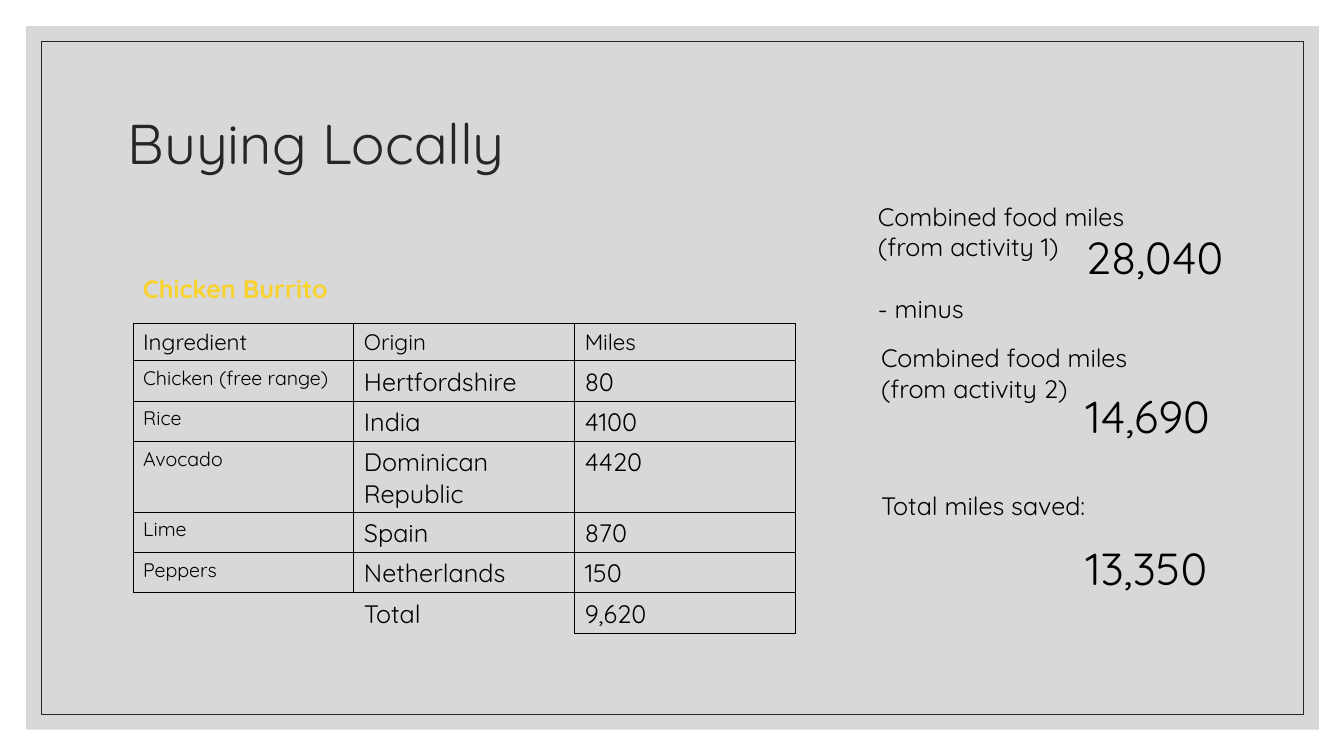
from lxml import etree
from pptx import Presentation
from pptx.dml.color import RGBColor
from pptx.enum.shapes import MSO_SHAPE
from pptx.enum.text import MSO_ANCHOR
from pptx.oxml.ns import qn
from pptx.util import Inches, Pt

RECT = MSO_SHAPE.RECTANGLE
TOP, MIDDLE = MSO_ANCHOR.TOP, MSO_ANCHOR.MIDDLE
COLORS = {"panel": "BFBFBF", "title": "262626", "text": "000000", "dish": "F8D22F"}
SIDES = "LRTB"
ROWS = [
    ("Ingredient", "Origin", "Miles"),
    ("Chicken (free range)", "Hertfordshire", "80"),
    ("Rice", "India", "4100"),
    ("Avocado", "Dominican Republic", "4420"),
    ("Lime", "Spain", "870"),
    ("Peppers", "Netherlands", "150"),
    ("", "Total", "9,620"),
]
ROW_HEIGHTS = [0.37, 0.4, 0.4, 0.7, 0.4, 0.4, 0.4]
TOTAL_ROW_SIDES = ["T", "TR", SIDES]
LABELS = [
    (8.61, 1.95, 3.3, 0.71, "Combined food miles (from activity 1)"),
    (8.61, 2.86, 3.36, 0.4, "- minus"),
    (8.64, 3.35, 3.3, 0.71, "Combined food miles (from activity 2)"),
    (8.64, 4.82, 2.97, 0.4, "Total miles saved:"),
]
MILES = [(2.23, "28,040"), (3.81, "14,690"), (5.32, "13,350")]


class SlideBuilder:
    """Draws styled elements on one slide."""

    def __init__(self, slide, font="Quicksand"):
        self.shapes = slide.shapes
        self.font = font

    def color(self, name):
        return RGBColor.from_string(COLORS[name])

    def style(self, p, size, color="text", bold=False):
        for r in p.runs:
            r.font.name = self.font
            r.font.size = Pt(size)
            r.font.bold = bold
            r.font.color.rgb = self.color(color)

    def rect(self, x, y, w, h, fill=None, alpha=100, line=None):
        s = self.shapes.add_shape(RECT, Inches(x), Inches(y), Inches(w), Inches(h))
        s.shadow.inherit = False
        if fill:
            s.fill.solid()
            s.fill.fore_color.rgb = self.color(fill)
            clr = s.fill._xPr.find(qn("a:solidFill"))[0]
            etree.SubElement(clr, qn("a:alpha"), val=str(alpha * 1000))
        else:
            s.fill.background()
        if line:
            s.line.color.rgb = self.color(line)
            s.line.width = Pt(0.5)
        else:
            s.line.fill.background()

    def text(self, x, y, w, h, text, size=18, color="text", bold=False,
             anchor=TOP, spacing=1.0):
        s = self.shapes.add_textbox(Inches(x), Inches(y), Inches(w), Inches(h))
        tf = s.text_frame
        tf.word_wrap = True
        tf.vertical_anchor = anchor
        tf.text = text
        p = tf.paragraphs[0]
        p.line_spacing = spacing
        self.style(p, size, color, bold)

    def borders(self, cell, shown):
        tc_pr = cell._tc.get_or_add_tcPr()
        for i, side in enumerate(SIDES):
            ln = etree.Element(qn("a:ln" + side), w=str(Pt(1)))
            if side in shown:
                fill = etree.SubElement(ln, qn("a:solidFill"))
                etree.SubElement(fill, qn("a:srgbClr"), val=COLORS["text"])
            else:
                etree.SubElement(ln, qn("a:noFill"))
            tc_pr.insert(i, ln)

    def table(self, x, y, col_width, heights, rows):
        n_cols = len(rows[0])
        table = self.shapes.add_table(
            len(rows), n_cols, Inches(x), Inches(y),
            Inches(col_width * n_cols), Inches(sum(heights))).table
        table.first_row = table.horz_banding = False
        for col in table.columns:
            col.width = Inches(col_width)
        for i, values in enumerate(rows):
            table.rows[i].height = Inches(heights[i])
            for j, value in enumerate(values):
                cell = table.cell(i, j)
                cell.text = value
                cell.fill.background()
                size = 16 if i == 0 else 14 if j == 0 else 18
                self.style(cell.text_frame.paragraphs[0], size)
                is_total = i == len(rows) - 1
                self.borders(cell, TOTAL_ROW_SIDES[j] if is_total else SIDES)


def main():
    prs = Presentation()
    prs.slide_width, prs.slide_height = Inches(13.33), Inches(7.5)
    b = SlideBuilder(prs.slides.add_slide(prs.slide_layouts[6]))
    b.rect(0.26, 0.26, 12.82, 6.98, fill="panel", alpha=60)
    b.rect(0.41, 0.41, 12.52, 6.68, line="title")
    b.text(1.17, 0.7, 11, 1.5, "Buying Locally", 40, "title", anchor=MIDDLE, spacing=0.9)
    b.text(1.32, 2.66, 2.27, 0.4, "Chicken Burrito", color="dish", bold=True)
    b.table(1.32, 3.21, 2.19, ROW_HEIGHTS, ROWS)
    for label in LABELS:
        b.text(*label)
    for y, miles in MILES:
        b.text(10.67, y, 1.64, 0.66, miles, 32)
    prs.save("out.pptx")


if __name__ == "__main__":
    main()
